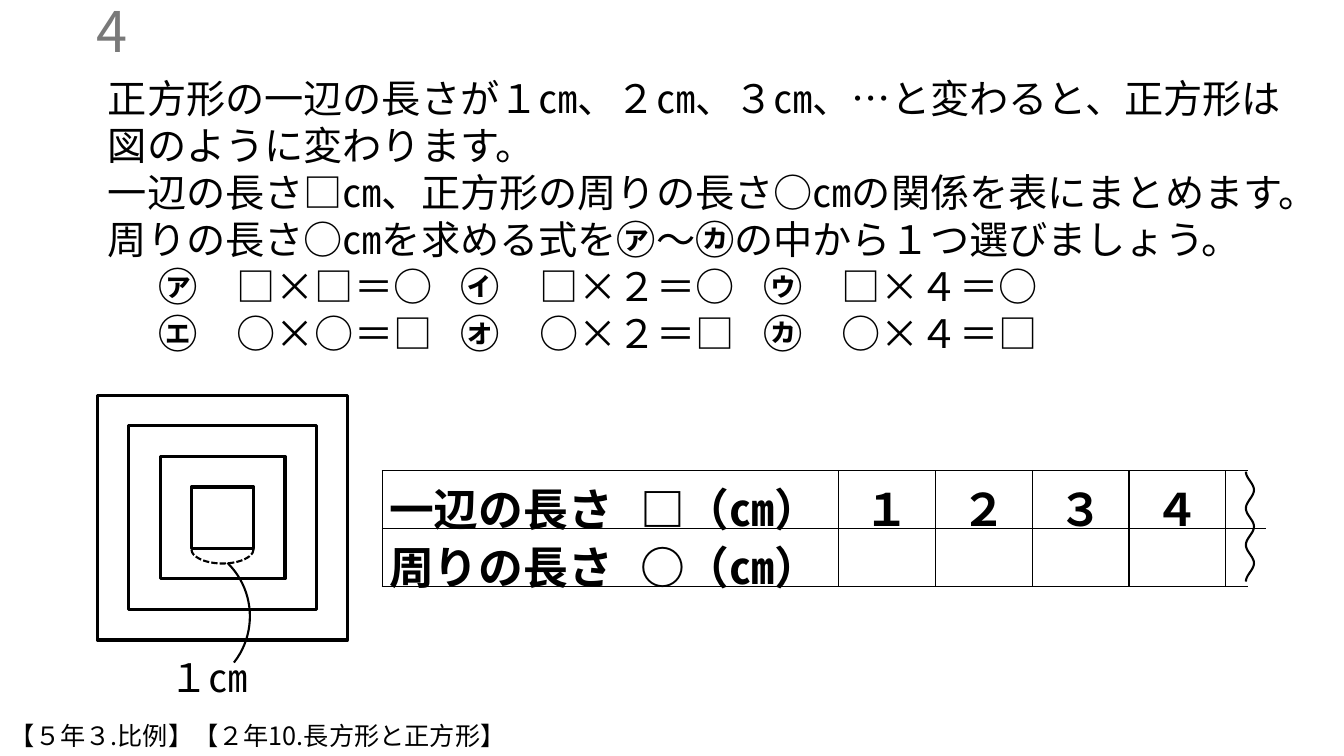
import itertools
import math
from dataclasses import dataclass

import pptx
import pptx.util
import pptx.dml.color
import pptx.enum.dml
import pptx.enum.shapes
import pptx.enum.text
import pptx.oxml
import pptx.oxml.ns

ALIGN = pptx.enum.text.PP_ALIGN
ANCHOR = pptx.enum.text.MSO_ANCHOR
SHAPE = pptx.enum.shapes.MSO_SHAPE
WIDTH, HEIGHT = pptx.util.Inches(13.33), pptx.util.Inches(7.5)
CIRCLED = "㋐㋑㋒㋓㋔㋕"


@dataclass(frozen=True)
class Theme:
    font: str = "Noto Sans CJK JP"
    ink: str = "000000"
    muted: str = "797979"
    number: int = 40
    table: int = 32
    body: int = 28
    footer: int = 18
    leading: float = 1.2
    thick: float = 2.25
    medium: float = 1.5
    thin: float = 1


THEME = Theme()
PROBLEM = [
    "正方形の一辺の長さが１㎝、２㎝、３㎝、…と変わると、正方形は図のように変わります。",
    "一辺の長さ□㎝、正方形の周りの長さ○㎝の関係を表にまとめます。",
    "周りの長さ○㎝を求める式を㋐～㋕の中から１つ選びましょう。",
]
CHOICES = [
    ["㋐　□×□＝○", "㋑　□×２＝○", "㋒　□×４＝○"],
    ["㋓　○×○＝□", "㋔　○×２＝□", "㋕　○×４＝□"],
]
ROWS = [
    ["一辺の長さ", "□（㎝）", "１", "２", "３", "４", "", ""],
    ["周りの長さ", "○（㎝）", "", "", "", "", "", ""],
]
COLUMNS = [18.68, 15.3, 7.2, 7.2, 7.2, 7.2, 1.65, 0.53]
EDGES = ["LTB", "RTB", "LRTB", "LRTB", "LRTB", "LRTB", "LTB", ""]


def across(share):
    return int(WIDTH * share / 100)


def down(share):
    return int(HEIGHT * share / 100)


def box(x, y, w, h):
    return across(x), down(y), across(w), down(h)


def apply(target, values):
    for name, value in values.items():
        setattr(target, name, value)


def add_xml(parent, tag, **attrs):
    child = pptx.oxml.parse_xml(f"<a:{tag} {pptx.oxml.ns.nsdecls('a')}/>")
    for name, value in attrs.items():
        child.set(name, str(value))
    parent.append(child)
    return child


def write(p, text, size, color=THEME.ink, bold=False, align=ALIGN.LEFT, leading=THEME.leading):
    apply(p, {"alignment": align, "line_spacing": pptx.util.Pt(round(size * leading, 1)),
              "space_before": pptx.util.Pt(0), "space_after": pptx.util.Pt(0)})
    for circled, chars in itertools.groupby(text, lambda ch: ch in CIRCLED):
        r = p.add_run()
        r.text = "".join(chars)
        apply(r.font, {"name": THEME.font, "size": pptx.util.Pt(size), "bold": bold or circled})
        r.font.color.rgb = pptx.dml.color.RGBColor.from_string(color)
        rpr = r._r.get_or_add_rPr()
        ea = add_xml(rpr, "ea", typeface=THEME.font)
        rpr.find(pptx.oxml.ns.qn("a:latin")).addnext(ea)


def place(sp, area):
    apply(sp, dict(zip(("left", "top", "width", "height"), area)))
    tf = sp.text_frame
    apply(tf, {"word_wrap": True, "auto_size": pptx.enum.text.MSO_AUTO_SIZE.NONE})
    return tf


def add_label(s, text, size, area):
    tf = place(s.shapes.add_textbox(*area), area)
    write(tf.paragraphs[0], text, size)


def outline(sp, width, dash=None):
    sp.shadow.inherit = False
    sp.fill.background()
    sp.line.color.rgb = pptx.dml.color.RGBColor.from_string(THEME.ink)
    apply(sp.line, {"width": pptx.util.Pt(width), "dash_style": dash})


def add_arc(s, area, start, end, dash=None):
    sp = s.shapes.add_shape(SHAPE.ARC, *area)
    for i, degrees in enumerate((start, end)):
        sp.adjustments[i] = degrees * 0.6
    outline(sp, THEME.medium, dash)


def add_squares(s, cx, cy, step_w, step_h):
    for n in range(1, 5):
        w, h = n * step_w, n * step_h
        sp = s.shapes.add_shape(SHAPE.RECTANGLE, *box(cx - w / 2, cy - h / 2, w, h))
        outline(sp, THEME.thick)


def add_problem(sp, area):
    tf = place(sp, area)
    tf.vertical_anchor = ANCHOR.TOP
    lines = PROBLEM + ["".join("\t" + choice for choice in row) for row in CHOICES]
    for i, line in enumerate(lines):
        p = tf.add_paragraph() if i else tf.paragraphs[0]
        ppr = p._p.get_or_add_pPr()
        ppr.set("marL", "0")
        ppr.set("indent", "0")
        add_xml(ppr, "buNone")
        if line.startswith("\t"):
            tabs = add_xml(ppr, "tabLst")
            for n in range(3):
                add_xml(tabs, "tab", pos=across(2.7 + n * 30.52), algn="l")
        write(p, line, THEME.body)


def set_borders(cell, edges):
    tcpr = cell._tc.get_or_add_tcPr()
    for side in "LRTB":
        ln = add_xml(tcpr, "ln" + side, w=pptx.util.Pt(THEME.thin))
        if side in edges:
            add_xml(add_xml(ln, "solidFill"), "srgbClr", val=THEME.ink)
        else:
            add_xml(ln, "noFill")


def add_relation_table(s, area):
    table = s.shapes.add_table(len(ROWS), len(COLUMNS), *area).table
    apply(table, {"first_row": False, "horz_banding": False})
    for column, share in zip(table.columns, COLUMNS):
        column.width = across(share)
    drop = pptx.util.Inches(0.11)
    for i, row in enumerate(ROWS):
        for j, text in enumerate(row):
            cell = table.cell(i, j)
            inset = pptx.util.Inches(0.07)
            apply(cell, {"margin_left": inset, "margin_right": inset,
                         "margin_top": drop, "margin_bottom": -drop})
            set_borders(cell, EDGES[j] or "BT"[i])
            cell.fill.background()
            if text:
                align = ALIGN.CENTER if j > 1 else ALIGN.LEFT
                write(cell.text_frame.paragraphs[0], text, THEME.table, bold=True,
                      align=align, leading=1.28)


def add_wave(s, x, y, amplitude, length, periods=3, steps=60):
    points = [(across(x - amplitude * math.cos(2 * math.pi * periods * n / steps)),
               down(y + length * n / steps)) for n in range(steps + 1)]
    builder = s.shapes.build_freeform(*points[0])
    builder.add_line_segments(points[1:], close=False)
    outline(builder.convert_to_shape(), THEME.medium)


def main():
    prs = pptx.Presentation()
    apply(prs, {"slide_width": WIDTH, "slide_height": HEIGHT})
    s = prs.slides.add_slide(prs.slide_layouts[1])
    tf = place(s.shapes.title, box(-12.23, 1.33, 22.5, 5.33))
    tf.vertical_anchor = ANCHOR.MIDDLE
    write(tf.paragraphs[0], "4", THEME.number, THEME.muted, align=ALIGN.RIGHT)
    add_problem(s.placeholders[1], box(7.28, 9.2, 89.78, 39.07))
    add_squares(s, 16.56, 68.47, 4.65, 8.1)
    add_arc(s, box(14.23, 70.67, 4.65, 3.87), 0, 180, pptx.enum.dml.MSO_LINE.SQUARE_DOT)
    add_arc(s, box(7.73, 71.73, 10.87, 19.6), 313.4, 39)
    add_label(s, "１㎝", THEME.body, box(11.85, 85.8, 8.55, 7.6))
    add_relation_table(s, box(28.43, 62.27, 64.96, 15.33))
    add_wave(s, 93, 62.4, 0.3, 14.53)
    add_label(s, "【５年３.比例】【２年10.長方形と正方形】", THEME.footer, box(0, 94.67, 56.18, 5.33))
    prs.save("out.pptx")


if __name__ == "__main__":
    main()
